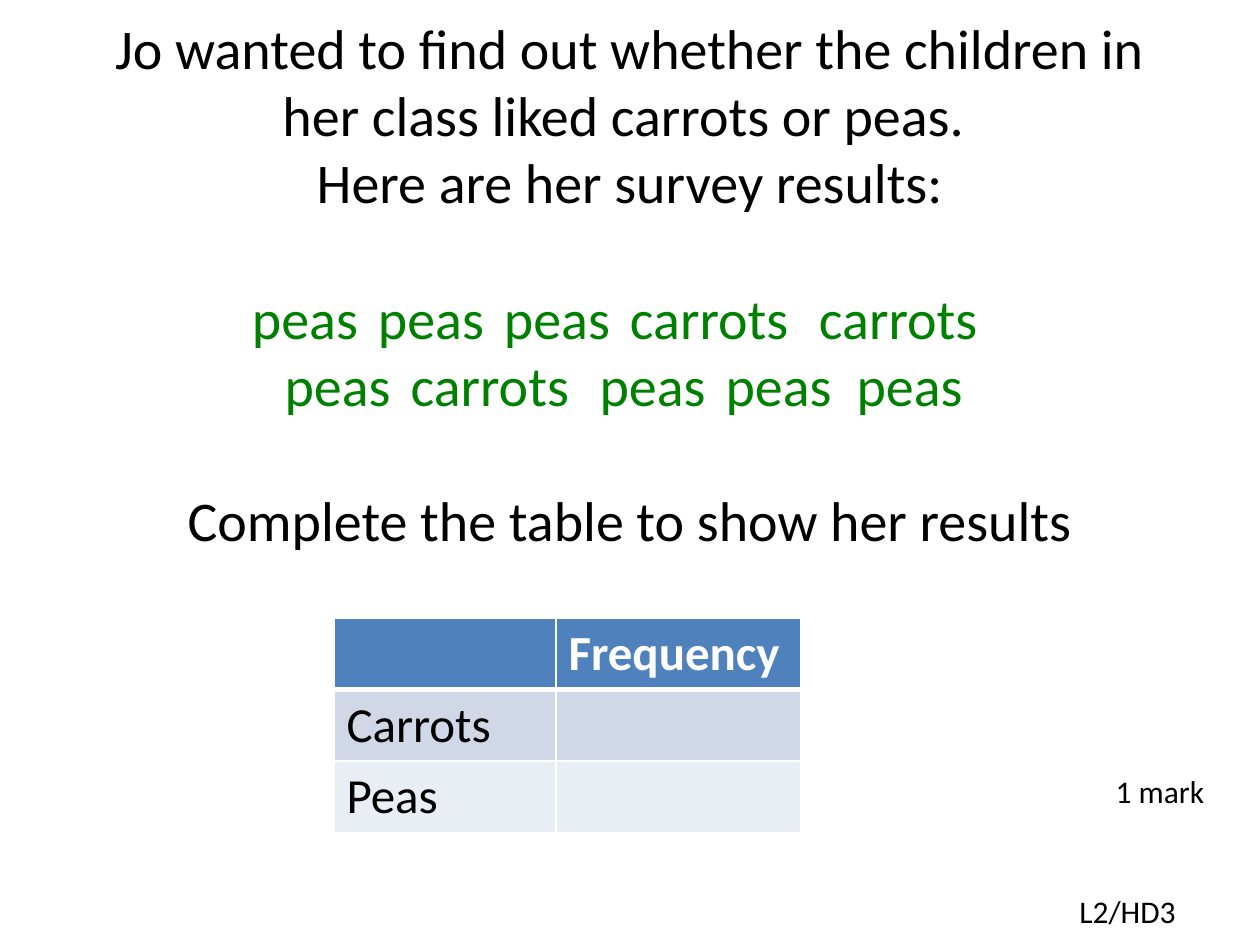
from dataclasses import dataclass

from lxml.etree import SubElement
from pptx import Presentation
from pptx.dml.color import RGBColor as Color
from pptx.enum.text import MSO_ANCHOR as Anchor, PP_ALIGN as Align
from pptx.oxml.ns import qn
from pptx.util import Pt

PX = 914400 // 126


@dataclass(frozen=True)
class Theme:
    """Colours, font and type sizes of the slide."""
    font: str = "Calibri"
    ink: str = "000000"
    survey: str = "008000"
    white: str = "FFFFFF"
    header: str = "4F81BD"
    bands: tuple = ("D0D8E8", "E9EDF4")
    question_size: int = 32
    table_size: int = 28
    note_size: int = 18
    line_gap: int = 39


THEME = Theme()

QUESTION = [
    ("Jo wanted to find out whether the children in her class liked carrots or peas. ",
     THEME.ink, False, ()),
    ("Here are her survey results:", THEME.ink, False, ()),
    ("peas\tpeas\tpeas\tcarrots\tcarrots \t", THEME.survey, True,
     (126, 252, 378, 567, 756)),
    ("peas\tcarrots\tpeas\tpeas\tpeas ", THEME.survey, False,
     (126, 315, 441, 572)),
    ("Complete the table to show her results", THEME.ink, True, ()),
]
FREQUENCIES = [("", "Frequency"), ("Carrots", ""), ("Peas", "")]


def px(length):
    """Turn pixels into EMU."""
    return length * PX


def add_run(paragraph, text, size, color=THEME.ink, bold=False):
    """Add one styled run."""
    run = paragraph.add_run()
    run.text = text
    font = run.font
    font.name, font.size, font.bold = THEME.font, Pt(size), bold
    font.color.rgb = Color.from_string(color)


def add_frame(slide, left, top, width, height):
    """Add a wrapping text box and return its text frame."""
    frame = slide.shapes.add_textbox(*map(px, (left, top, width, height))).text_frame
    frame.word_wrap = True
    return frame


def set_tabs(paragraph, stops):
    """Give a paragraph left tab stops."""
    tabs = SubElement(paragraph._p.get_or_add_pPr(), qn("a:tabLst"))
    for stop in stops:
        SubElement(tabs, qn("a:tab"), pos=str(px(stop)), algn="l")


def add_question(slide):
    """Add the centred question with its survey results."""
    frame = add_frame(slide, 63, 204, 1134, 158)
    frame.vertical_anchor = Anchor.MIDDLE
    for index, (text, color, starts_group, stops) in enumerate(QUESTION):
        line = frame.add_paragraph() if index else frame.paragraphs[0]
        line.alignment = Align.CENTER
        if starts_group:
            line.space_before = Pt(THEME.line_gap)
        if stops:
            set_tabs(line, stops)
        add_run(line, text, THEME.question_size, color)


def add_note(slide, text, left, top, width, align):
    """Add a small one-line note."""
    line = add_frame(slide, left, top, width, 50).paragraphs[0]
    line.alignment = align
    add_run(line, text, THEME.note_size)


def set_borders(cell, widths):
    """Draw white borders with widths in points by side."""
    properties = cell._tc.get_or_add_tcPr()
    for side, width in widths.items():
        border = SubElement(properties, qn(f"a:ln{side}"), w=str(Pt(width)))
        fill = SubElement(border, qn("a:solidFill"))
        SubElement(fill, qn("a:srgbClr"), val=THEME.white)


def add_frequency_table(slide):
    """Add the table that is to be completed."""
    widths, row_height = (222, 245), 71
    table = slide.shapes.add_table(
        len(FREQUENCIES), len(widths), px(334), px(618),
        px(sum(widths)), px(row_height * len(FREQUENCIES))).table
    for column, width in zip(table.columns, widths):
        column.width = px(width)
    for row_index, labels in enumerate(FREQUENCIES):
        table.rows[row_index].height = px(row_height)
        is_header = row_index == 0
        band = THEME.header if is_header else THEME.bands[(row_index - 1) % 2]
        for column_index, label in enumerate(labels):
            cell = table.cell(row_index, column_index)
            set_borders(cell, {"L": 1, "R": 1, "T": 3 if row_index == 1 else 1,
                               "B": 3 if is_header else 1})
            cell.fill.solid()
            cell.fill.fore_color.rgb = Color.from_string(band)
            if label:
                add_run(cell.text_frame.paragraphs[0], label, THEME.table_size,
                        THEME.white if is_header else THEME.ink, is_header)


def main():
    """Build and save the slide."""
    deck = Presentation()
    deck.slide_width, deck.slide_height = px(1260), px(945)
    slide = deck.slides.add_slide(deck.slide_layouts[6])
    add_question(slide)
    add_note(slide, "L2/HD3", 1067, 886, 220, Align.LEFT)
    add_frequency_table(slide)
    add_note(slide, "1 mark", 1077, 766, 166, Align.CENTER)
    deck.save("out.pptx")


if __name__ == "__main__":
    main()
